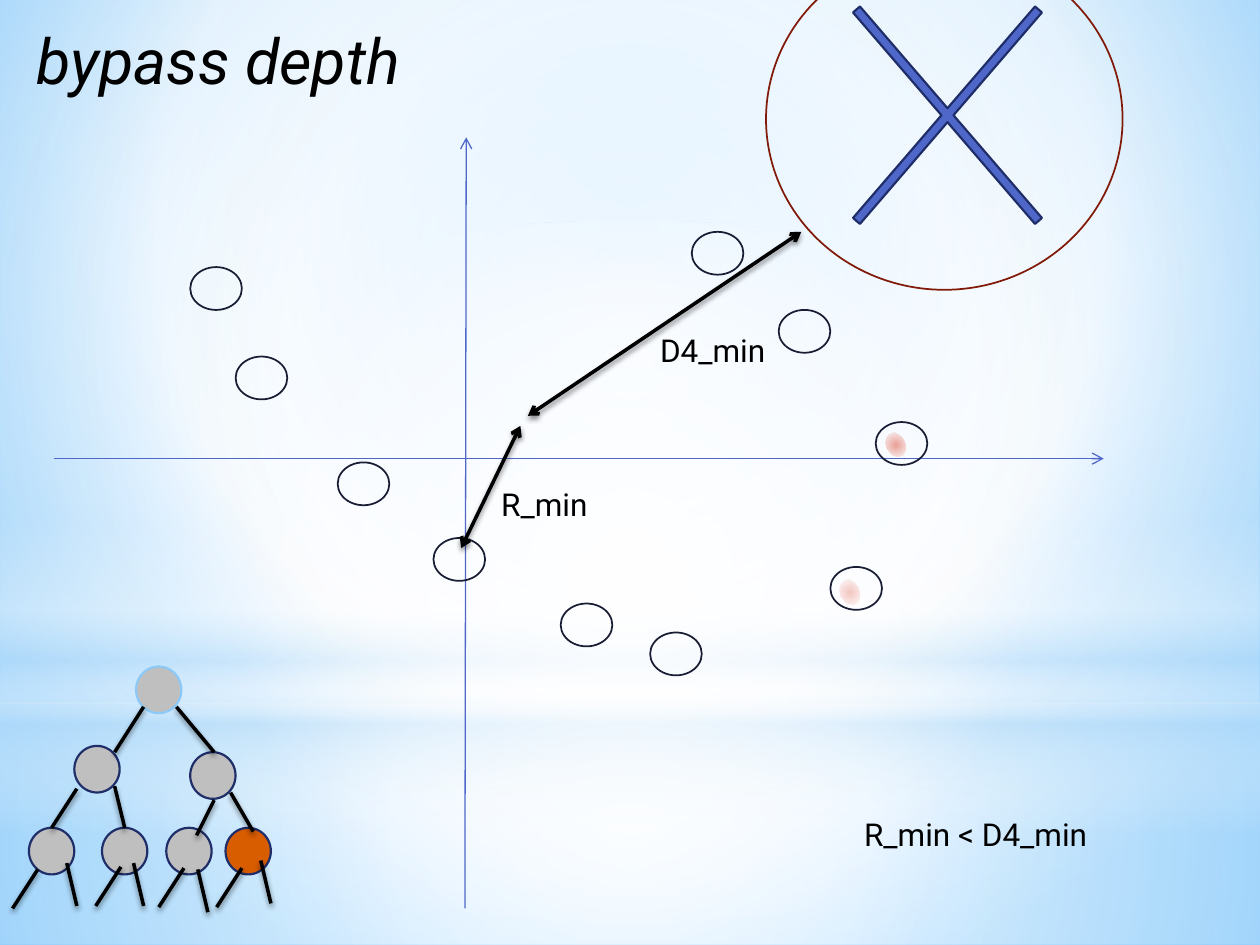
from lxml import etree
from pptx import Presentation
from pptx.dml.color import RGBColor
from pptx.enum.shapes import MSO_CONNECTOR as CONN, MSO_SHAPE as SHAPE
from pptx.enum.text import MSO_AUTO_SIZE as AUTO
from pptx.oxml.ns import qn
from pptx.util import Inches, Pt

BLACK = RGBColor(0x00, 0x00, 0x00)
BLUE = RGBColor(0x4E, 0x67, 0xC8)
NAVY = RGBColor(0x1F, 0x2E, 0x69)
INK = RGBColor(0x19, 0x1D, 0x34)
SKY = RGBColor(0x8C, 0xC9, 0xF7)
GRAY = RGBColor(0xBF, 0xBF, 0xBF)
ORANGE = RGBColor(0xD8, 0x5C, 0x00)
DARK_RED = RGBColor(0x82, 0x1A, 0x08)
RED = RGBColor(0xE0, 0x40, 0x28)
WHITE = RGBColor(0xFF, 0xFF, 0xFF)
PALE = RGBColor(0xB4, 0xDC, 0xFA)
BG_IN = RGBColor(0x9E, 0xD5, 0xFF)
BG_OUT = RGBColor(0x5B, 0xB9, 0xFF)

FONT = "Roboto"
CENTER = (50, 50, 50, 50)

# Outer points of the cloud: left, top
POINTS = [(1.51, 2.12), (1.87, 2.83), (2.68, 3.67), (3.44, 4.27), (4.45, 4.79),
          (5.16, 5.02), (6.59, 4.5), (6.95, 3.35), (6.18, 2.46), (5.49, 1.84)]

# Tree nodes: left, top, fill, line
NODES = [(1.08, 5.29, GRAY, SKY), (1.51, 5.97, GRAY, NAVY), (0.59, 5.92, GRAY, NAVY),
         (1.79, 6.57, ORANGE, NAVY), (1.32, 6.57, GRAY, NAVY),
         (0.81, 6.57, GRAY, NAVY), (0.23, 6.57, GRAY, NAVY)]
BRANCHES = [((0.91, 5.97), (1.14, 5.61)), ((0.41, 6.57), (0.61, 6.26)),
            ((1.7, 5.97), (1.4, 5.61)), ((0.99, 6.57), (0.91, 6.24)),
            ((2.01, 6.6), (1.83, 6.29)), ((1.56, 6.63), (1.7, 6.35))]
# Upper ends of the stubs below the leaves
LEFT_STUBS = [(0.3, 6.9), (0.96, 6.88), (1.46, 6.89), (1.92, 6.89)]
RIGHT_STUBS = [(0.53, 6.85), (1.06, 6.85), (1.57, 6.9), (2.07, 6.83)]


def set_gradient(fill, parent, stops, focus=None):
    """Stops are (position %, colour, opacity %); without a focus it runs downwards."""
    fill.solid()
    old = parent.find(qn("a:solidFill"))
    grad = etree.Element(qn("a:gradFill"), rotWithShape="1")
    gs_list = etree.SubElement(grad, qn("a:gsLst"))
    for pos, color, opacity in stops:
        gs = etree.SubElement(gs_list, qn("a:gs"), pos=str(pos * 1000))
        clr = etree.SubElement(gs, qn("a:srgbClr"), val=str(color))
        if opacity < 100:
            etree.SubElement(clr, qn("a:alpha"), val=str(opacity * 1000))
    if focus:
        way = etree.SubElement(grad, qn("a:path"), path="circle")
        sides = {k: str(v * 1000) for k, v in zip("ltrb", focus)}
        etree.SubElement(way, qn("a:fillToRect"), **sides)
    else:
        etree.SubElement(grad, qn("a:lin"), ang="5400000", scaled="0")
    parent.replace(old, grad)


def add_shape(s, kind, box, fill=None, line=None, width=1.25):
    sp = s.shapes.add_shape(kind, *map(Inches, box))
    sp.shadow.inherit = False
    if fill is None:
        sp.fill.background()
    else:
        sp.fill.solid()
        sp.fill.fore_color.rgb = fill
    if line is None:
        sp.line.fill.background()
    else:
        sp.line.color.rgb = line
        sp.line.width = Pt(width)
    return sp


def add_glow(s, kind, box, stops, focus=None):
    sp = add_shape(s, kind, box)
    set_gradient(sp.fill, sp._element.spPr, stops, focus)
    return sp


def add_line(s, start, end, color=BLACK, width=2, ends=(), shadow=True):
    c = s.shapes.add_connector(CONN.STRAIGHT, *map(Inches, (*start, *end)))
    c.line.color.rgb = color
    c.line.width = Pt(width)
    ln = c.line._get_or_add_ln()
    for tag in ends:
        etree.SubElement(ln, qn(tag), type="arrow")
    effects = etree.SubElement(c._element.spPr, qn("a:effectLst"))
    if shadow:
        shd = etree.SubElement(effects, qn("a:outerShdw"), blurRad=str(Pt(3.1)),
                               dist=str(Pt(1.8)), dir="5400000", rotWithShape="0")
        clr = etree.SubElement(shd, qn("a:srgbClr"), val=str(BLACK))
        etree.SubElement(clr, qn("a:alpha"), val="45000")


def add_text(s, box, text, size=18, italic=False):
    tf = s.shapes.add_textbox(*map(Inches, box)).text_frame
    tf.word_wrap = False
    tf.auto_size = AUTO.SHAPE_TO_FIT_TEXT
    r = tf.paragraphs[0].add_run()
    r.text = text
    r.font.color.rgb = BLACK
    for name, value in {"name": FONT, "size": Pt(size), "italic": italic}.items():
        setattr(r.font, name, value)


def add_backdrop(s):
    fill = s.background.fill
    fill.solid()
    bg = s._element.find(".//" + qn("p:bgPr"))
    set_gradient(fill, bg, [(0, BG_IN, 100), (60, WHITE, 100), (100, BG_OUT, 100)],
                 (20, 10, 20, 60))
    add_glow(s, SHAPE.RECTANGLE, (0, 5.58, 10, 1.92),
             [(0, WHITE, 91), (37, WHITE, 76), (100, PALE, 79)], CENTER)
    add_glow(s, SHAPE.RECTANGLE, (0, 0, 10, 5.58),
             [(0, WHITE, 89), (48, WHITE, 62), (100, PALE, 79)], CENTER)
    add_glow(s, SHAPE.RECTANGLE, (0, 4.12, 10, 2.5),
             [(0, WHITE, 0), (29, WHITE, 30), (45, PALE, 40),
              (55, WHITE, 26), (65, PALE, 60), (100, WHITE, 0)])
    add_glow(s, SHAPE.OVAL, (0, 1.75, 10, 5.58),
             [(0, WHITE, 100), (56, WHITE, 0)], CENTER)


def add_plot(s):
    # Axes
    for start, end in [((3.69, 7.21), (3.7, 1.09)), ((0.43, 3.64), (8.76, 3.64))]:
        add_line(s, start, end, BLUE, 0.75, ["a:tailEnd"], shadow=False)
    # Faint red spots
    for x, y, opacity in [(7.03, 3.43, 50), (6.67, 4.6, 30)]:
        spot = add_glow(s, SHAPE.OVAL, (x, y, 0.15, 0.2),
                        [(0, RED, opacity), (100, RED, 0)], CENTER)
        spot.rotation = -25
    # Rejected region and cloud points
    add_shape(s, SHAPE.OVAL, (6.08, -0.41, 2.83, 2.71), line=DARK_RED, width=1)
    for x, y in POINTS:
        add_shape(s, SHAPE.OVAL, (x, y, 0.41, 0.34), line=INK, width=1)
    cross = add_shape(s, SHAPE.MATH_MULTIPLY, (6.13, -0.7, 2.78, 3.23), BLUE, NAVY)
    cross.adjustments[0] = 0.026
    # Distances
    for start, end in [((3.66, 4.35), (4.13, 3.38)), ((6.36, 1.84), (4.19, 3.3))]:
        add_line(s, start, end, ends=["a:headEnd", "a:tailEnd"])


def add_tree(s):
    for x, y, fill, line in NODES:
        add_shape(s, SHAPE.OVAL, (x, y, 0.36, 0.37), fill, line)
    stubs = [((x - 0.2, y + 0.31), (x, y)) for x, y in LEFT_STUBS]
    stubs += [((x + 0.08, y + 0.34), (x, y)) for x, y in RIGHT_STUBS]
    for start, end in BRANCHES + stubs:
        add_line(s, start, end)


def main():
    prs = Presentation()
    prs.slide_width, prs.slide_height = Inches(10), Inches(7.5)
    s = prs.slides.add_slide(prs.slide_layouts[6])
    add_backdrop(s)
    add_plot(s)
    add_tree(s)
    # Title and labels
    add_text(s, (0.19, 0.12, 3.16, 0.71), "bypass depth", 36, True)
    add_text(s, (3.88, 3.8, 0.9, 0.4), "R_min")
    add_text(s, (5.14, 2.58, 1.04, 0.4), "D4_min")
    add_text(s, (6.76, 6.42, 2.03, 0.4), "R_min < D4_min")
    prs.save("out.pptx")


if __name__ == "__main__":
    main()
